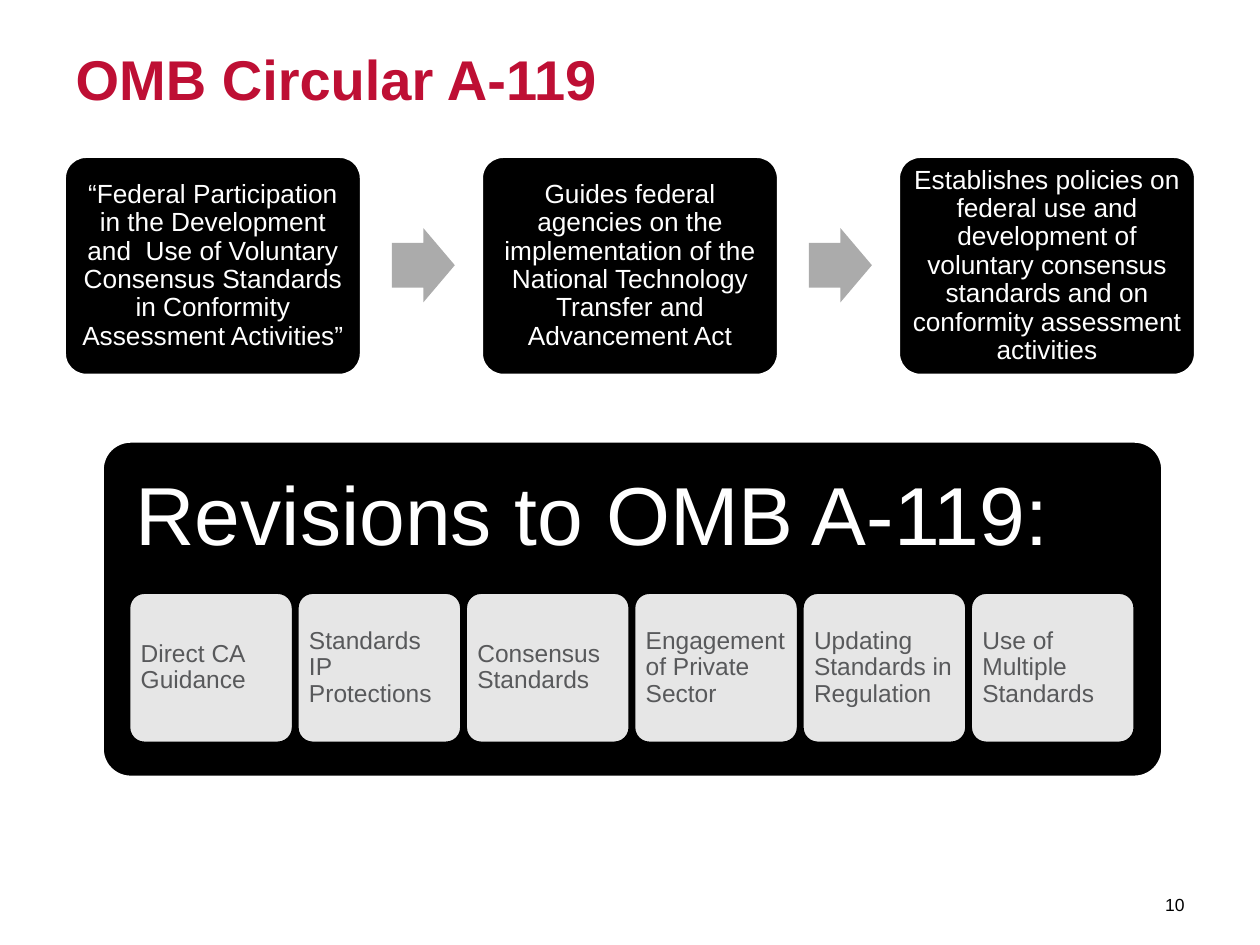
from dataclasses import dataclass

from lxml.etree import SubElement
from pptx import Presentation
from pptx.dml.color import RGBColor
from pptx.enum.shapes import MSO_SHAPE
from pptx.enum.text import MSO_ANCHOR, PP_ALIGN
from pptx.oxml.ns import qn
from pptx.util import Inches, Pt

BLACK, WHITE, CRIMSON, GREY, SLATE = "000000", "FFFFFF", "BE0F34", "ABABAB", "58595B"
FONT = "Arial"

STEPS = [
    "“Federal Participation in the Development and  Use of Voluntary Consensus Standards "
    "in Conformity Assessment Activities”",
    "Guides federal agencies on the implementation of the National Technology Transfer "
    "and Advancement Act",
    "Establishes policies on federal use and development of voluntary consensus standards "
    "and on conformity assessment activities",
]
STEP_LEFT, STEP_PITCH = 0.51, 3.31
ARROW_OFFSET = 2.6

REVISIONS = [
    "Direct CA Guidance",
    "Standards IP Protections",
    "Consensus Standards",
    "Engagement of Private Sector",
    "Updating Standards in Regulation",
    "Use of Multiple Standards",
]
REVISION_LEFT, REVISION_PITCH = 1.02, 1.336


@dataclass
class CardStyle:
    width: float
    height: float
    corner: float
    fill: str
    line: str
    text_color: str
    text_size: float
    align: PP_ALIGN = PP_ALIGN.LEFT
    anchor: MSO_ANCHOR = MSO_ANCHOR.MIDDLE
    inset: float = 0.06
    opacity: int = 100


STEP = CardStyle(2.36, 1.74, 0.1, BLACK, WHITE, WHITE, 15, align=PP_ALIGN.CENTER)
PANEL = CardStyle(8.42, 2.67, 0.085, BLACK, WHITE, WHITE, 47,
                  anchor=MSO_ANCHOR.TOP, inset=0.2)
REVISION = CardStyle(1.31, 1.2, 0.105, WHITE, BLACK, SLATE, 14, opacity=90)


def rgb(color: str) -> RGBColor:
    return RGBColor.from_string(color)


def add_span(para, text: str, size: float, color: str, bold: bool = False) -> None:
    span = para.add_run()
    span.text = text
    span.font.name = FONT
    span.font.size = Pt(size)
    span.font.bold = bold
    span.font.color.rgb = rgb(color)


def add_filled_shape(shapes, kind: MSO_SHAPE, left: float, top: float,
                     width: float, height: float, fill: str):
    shape = shapes.add_shape(kind, Inches(left), Inches(top), Inches(width), Inches(height))
    shape.shadow.inherit = False
    shape.fill.solid()
    shape.fill.fore_color.rgb = rgb(fill)
    return shape


def set_opacity(shape, percent: int) -> None:
    color = shape.fill._xPr.find(qn("a:solidFill")).find(qn("a:srgbClr"))
    SubElement(color, qn("a:alpha")).set("val", str(percent * 1000))


def add_card(shapes, left: float, top: float, text: str, style: CardStyle) -> None:
    card = add_filled_shape(shapes, MSO_SHAPE.ROUNDED_RECTANGLE, left, top,
                            style.width, style.height, style.fill)
    card.adjustments[0] = style.corner
    card.line.color.rgb = rgb(style.line)
    card.line.width = Pt(2)
    if style.opacity < 100:
        set_opacity(card, style.opacity)

    frame = card.text_frame
    frame.word_wrap = True
    frame.vertical_anchor = style.anchor
    frame.margin_left = frame.margin_right = Inches(style.inset)
    frame.margin_top = frame.margin_bottom = Inches(style.inset)
    para = frame.paragraphs[0]
    para.alignment = style.align
    para.line_spacing = 0.9
    add_span(para, text, style.text_size, style.text_color)


def add_arrow(shapes, left: float) -> None:
    arrow = add_filled_shape(shapes, MSO_SHAPE.RIGHT_ARROW, left, 1.81, 0.5, 0.59, GREY)
    arrow.adjustments[0] = 0.6
    arrow.adjustments[1] = 0.5
    arrow.line.fill.background()


def add_title(page, text: str) -> None:
    title = page.shapes.title
    title.left, title.top = Inches(0.5), Inches(0.3)
    title.width, title.height = Inches(9), Inches(1.25)
    title.text_frame.vertical_anchor = MSO_ANCHOR.TOP
    para = title.text_frame.paragraphs[0]
    para.alignment = PP_ALIGN.LEFT
    add_span(para, text, 32, CRIMSON, bold=True)


def add_page_number(page, number: str) -> None:
    box = page.shapes.add_textbox(Inches(8.8), Inches(6.98), Inches(0.7), Inches(0.4))
    box.text_frame.word_wrap = True
    box.text_frame.vertical_anchor = MSO_ANCHOR.MIDDLE
    para = box.text_frame.paragraphs[0]
    para.alignment = PP_ALIGN.RIGHT
    add_span(para, number, 10, BLACK)


def main() -> None:
    deck = Presentation()
    deck.slide_width, deck.slide_height = Inches(10), Inches(7.5)
    page = deck.slides.add_slide(deck.slide_layouts[5])
    add_title(page, "OMB Circular A-119")

    process = page.shapes.add_group_shape().shapes
    for index, text in enumerate(STEPS):
        left = STEP_LEFT + index * STEP_PITCH
        add_card(process, left, 1.24, text, STEP)
        if index < len(STEPS) - 1:
            add_arrow(process, left + ARROW_OFFSET)

    add_page_number(page, "10")

    revisions = page.shapes.add_group_shape().shapes
    add_card(revisions, 0.81, 3.5, "Revisions to OMB A-119:", PANEL)
    for index, text in enumerate(REVISIONS):
        add_card(revisions, REVISION_LEFT + index * REVISION_PITCH, 4.7, text, REVISION)

    deck.save("out.pptx")


if __name__ == "__main__":
    main()
